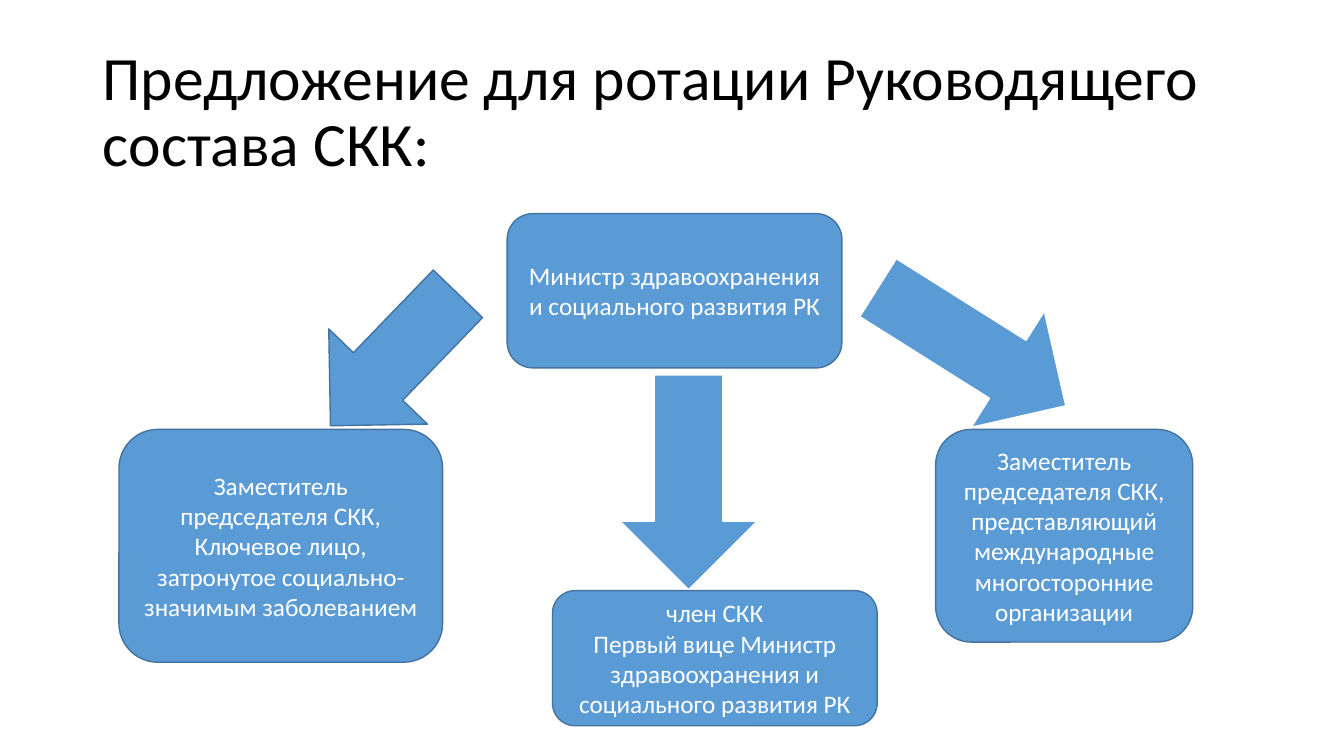
from pptx import Presentation
from pptx.dml.color import RGBColor
from pptx.enum.shapes import MSO_SHAPE
from pptx.enum.text import MSO_ANCHOR, PP_ALIGN
from pptx.util import Inches, Pt

COLORS = {"fill": "5B9BD5", "outline": "43739E", "white": "FFFFFF", "black": "000000"}
FONT = "Calibri"


def add_block(page, kind, bounds, outline):
    shape = page.shapes.add_shape(kind, *[Inches(value) for value in bounds])
    shape.shadow.inherit = False
    shape.fill.solid()
    shape.fill.fore_color.rgb = RGBColor.from_string(COLORS["fill"])
    shape.line.color.rgb = RGBColor.from_string(COLORS[outline])
    shape.line.width = Pt(1)
    return shape


def write_text(shape, lines, size, color, alignment):
    frame = shape.text_frame
    frame.word_wrap = True
    frame.vertical_anchor = MSO_ANCHOR.MIDDLE
    frame.text = "\n".join(lines)
    for para in frame.paragraphs:
        para.alignment = alignment
        for span in para.runs:
            span.font.name = FONT
            span.font.size = Pt(size)
            span.font.color.rgb = RGBColor.from_string(COLORS[color])


deck = Presentation()
deck.slide_width = Inches(13.33)
deck.slide_height = Inches(7.5)
page = deck.slides.add_slide(deck.slide_layouts[6])

# Title
title = page.shapes.add_textbox(Inches(0.92), Inches(0.4), Inches(11.5), Inches(1.45))
write_text(title, ["Предложение для ротации Руководящего состава СКК:"],
           44, "black", PP_ALIGN.LEFT)
title.text_frame.paragraphs[0].line_spacing = 0.9

# Arrows from the minister to the three positions: bounds, rotation, outline
arrows = [
    ((3.23, 2.66, 1.36, 1.82), 44, "outline"),
    ((8.96, 2.34, 1.36, 2.2), 302.2, "white"),
    ((6.15, 3.72, 1.36, 2.13), 0, "white"),
]
for bounds, rotation, outline in arrows:
    arrow = add_block(page, MSO_SHAPE.DOWN_ARROW, bounds, outline)
    arrow.rotation = rotation

# Position boxes: bounds, lines of text
positions = [
    ((5.03, 2.12, 3.32, 1.53), ["Министр здравоохранения и социального развития РК"]),
    ((1.18, 4.26, 3.21, 2.31), ["Заместитель председателя СКК, Ключевое лицо, "
                                "затронутое социально-значимым заболеванием"]),
    ((9.28, 4.26, 2.55, 2.11), ["Заместитель председателя СКК, представляющий "
                                "международные многосторонние организации"]),
    ((5.48, 5.86, 3.22, 1.34), ["член СКК", "Первый вице Министр здравоохранения и "
                                            "социального развития РК"]),
]
for bounds, lines in positions:
    box = add_block(page, MSO_SHAPE.ROUNDED_RECTANGLE, bounds, "outline")
    write_text(box, lines, 18, "white", PP_ALIGN.CENTER)

deck.save("out.pptx")
